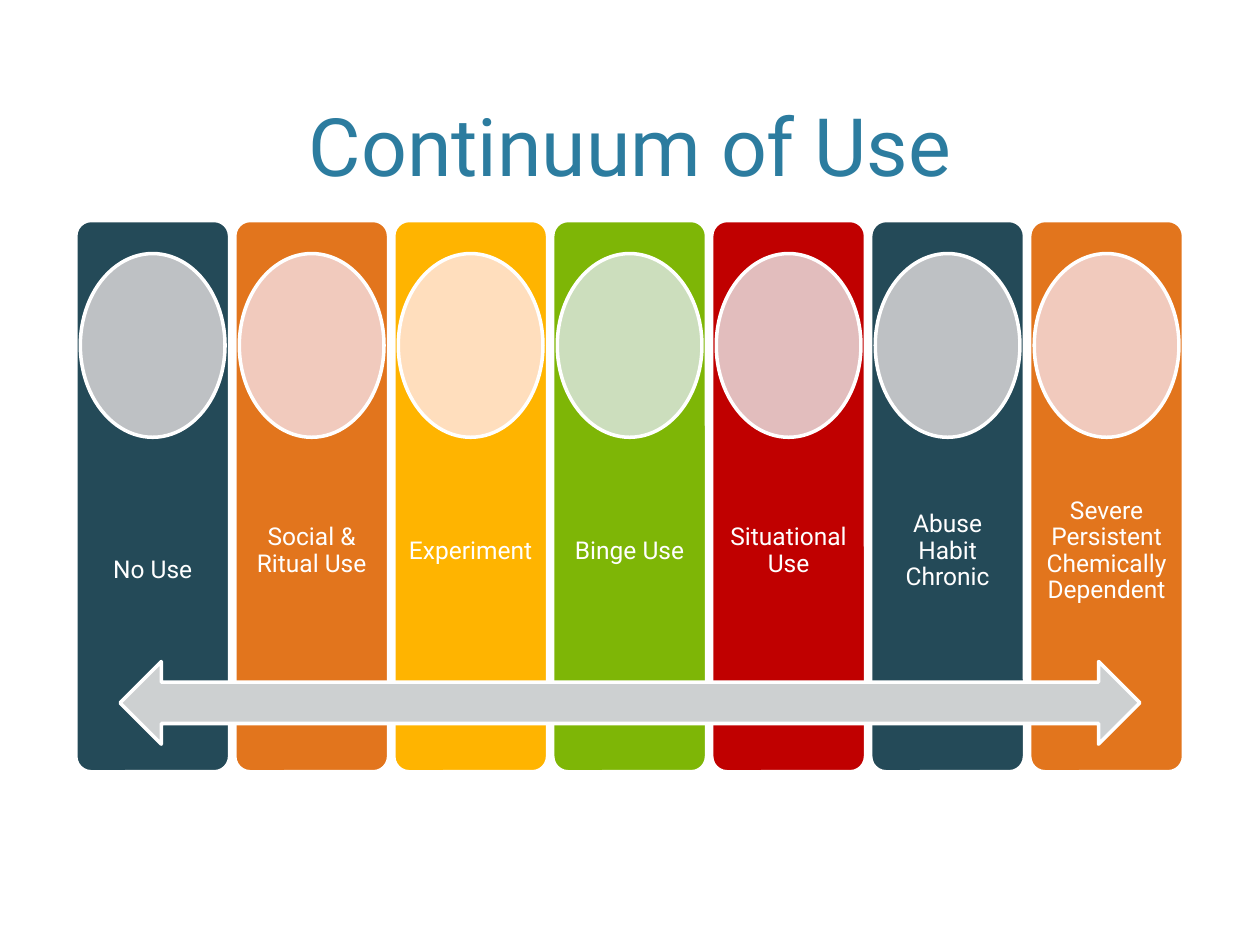
from pptx import Presentation
from pptx.dml.color import RGBColor
from pptx.enum.shapes import MSO_SHAPE as Shape
from pptx.enum.text import MSO_ANCHOR as Anchor, PP_ALIGN as Align
from pptx.util import Pt

COLORS = {
    "title": "2C7C9F", "white": "FFFFFF", "arrow": "CDD0D1",
    "navy": "244A58", "navy_pale": "BEC1C4",
    "orange": "E2751D", "orange_pale": "F1CABD",
    "yellow": "FFB400", "yellow_pale": "FFDEBD",
    "green": "7EB606", "green_pale": "CCDEBD",
    "red": "C00000", "red_pale": "E2BDBD",
}
# Label, colour, and how far the label sits below the common middle
STAGES = [
    ("No Use", "navy", 11),
    ("Social & Ritual Use", "orange", 0),
    ("Experiment", "yellow", 0),
    ("Binge Use", "green", 0),
    ("Situational Use", "red", 0),
    ("Abuse Habit Chronic", "navy", 0),
    ("Severe Persistent Chemically Dependent", "orange", 0),
]
LEFT, TOP = 43.3, 126
WIDTH, HEIGHT, PITCH = 87.9, 315, 90.85
OVAL_INSET = 2.6


class SlideBuilder:
    font = "Roboto"
    outline = 2

    def __init__(self, page):
        self.page = page

    def color(self, name):
        return RGBColor.from_string(COLORS[name])

    def add_text(self, frame, text, size, color):
        para = frame.paragraphs[0]
        para.alignment = Align.CENTER
        span = para.add_run()
        span.text = text
        span.font.name = self.font
        span.font.size = Pt(size)
        span.font.color.rgb = self.color(color)
        return para

    def title(self, text, left, top, width, height):
        box = self.page.shapes.title
        box.left, box.top, box.width, box.height = map(Pt, (left, top, width, height))
        box.text_frame.vertical_anchor = Anchor.BOTTOM
        self.add_text(box.text_frame, text, 46, "title")

    def shape(self, kind, fill, left, top, width, height):
        shape = self.page.shapes.add_shape(kind, *map(Pt, (left, top, width, height)))
        shape.shadow.inherit = False
        shape.fill.solid()
        shape.fill.fore_color.rgb = self.color(fill)
        shape.line.color.rgb = self.color("white")
        shape.line.width = Pt(self.outline)
        return shape

    def label(self, text, left, top, width, height):
        box = self.page.shapes.add_textbox(*map(Pt, (left, top, width, height)))
        frame = box.text_frame
        frame.word_wrap = True
        frame.vertical_anchor = Anchor.MIDDLE
        frame.margin_left = frame.margin_right = Pt(7.5)
        frame.margin_top = frame.margin_bottom = Pt(8)
        self.add_text(frame, text, 14, "white").line_spacing = 0.9


def main():
    deck = Presentation()
    deck.slide_width, deck.slide_height = Pt(720), Pt(540)
    builder = SlideBuilder(deck.slides.add_slide(deck.slide_layouts[5]))
    builder.title("Continuum of Use", 43.2, 8.6, 633.6, 105.1)

    for index, (text, color, drop) in enumerate(STAGES):
        left = LEFT + index * PITCH
        column = builder.shape(Shape.ROUNDED_RECTANGLE, color, left, TOP, WIDTH, HEIGHT)
        column.adjustments[0] = 0.1
        builder.label(text, left, TOP + 0.4 * HEIGHT + drop, WIDTH, 0.4 * HEIGHT)
        builder.shape(Shape.OVAL, f"{color}_pale", left + OVAL_INSET, TOP + 18.9,
                      WIDTH - 2 * OVAL_INSET, 105)

    builder.shape(Shape.LEFT_RIGHT_ARROW, "arrow", 68.6, TOP + 0.8 * HEIGHT, 582.8, 47.25)
    deck.save("out.pptx")


if __name__ == "__main__":
    main()
